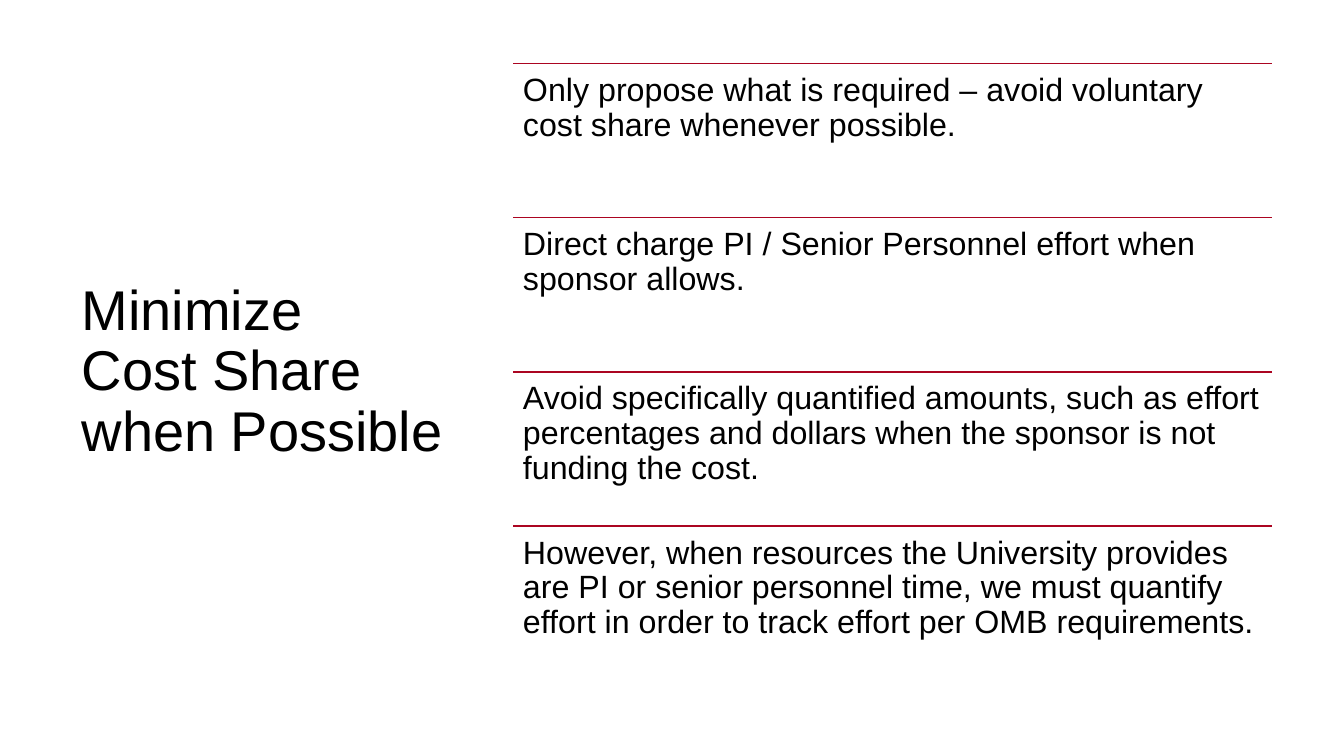
"""Build the slide on minimizing cost share, with four ruled statements."""
from lxml import etree
from pptx import Presentation
from pptx.dml.color import RGBColor
from pptx.enum.shapes import MSO_CONNECTOR
from pptx.enum.text import MSO_ANCHOR, MSO_AUTO_SIZE, PP_ALIGN
from pptx.oxml.ns import qn
from pptx.util import Pt

PX = 9144
BLACK = RGBColor(0x00, 0x00, 0x00)
CRIMSON = RGBColor(0xAB, 0x05, 0x21)
STRAIGHT = MSO_CONNECTOR.STRAIGHT
TOP, MIDDLE = MSO_ANCHOR.TOP, MSO_ANCHOR.MIDDLE
NO_AUTOFIT = MSO_AUTO_SIZE.NONE
LEFT = PP_ALIGN.LEFT

ADVICE = [
    "Only propose what is required – avoid voluntary cost share whenever possible.",
    "Direct charge PI / Senior Personnel effort when sponsor allows.",
    "Avoid specifically quantified amounts, such as effort percentages and dollars "
    "when the sponsor is not funding the cost.",
    "However, when resources the University provides are PI or senior personnel time, "
    "we must quantify effort in order to track effort per OMB requirements.",
]
ADVICE_LEFT, ADVICE_TOP = 509, 63
ADVICE_WIDTH, ADVICE_HEIGHT = 753, 153
INSET = 10


def write(frame, text, size, anchor):
    frame.word_wrap = True
    frame.auto_size = NO_AUTOFIT
    frame.vertical_anchor = anchor
    frame.text = text
    paragraph = frame.paragraphs[0]
    paragraph.alignment = LEFT
    paragraph.line_spacing = 0.9
    for run in paragraph.runs:
        run.font.name = "Arial"
        run.font.size = Pt(size)
        run.font.color.rgb = BLACK


presentation = Presentation()
presentation.slide_width = 12192000
presentation.slide_height = 750 * PX
slide = presentation.slides.add_slide(presentation.slide_layouts[5])

title = slide.shapes.title
title.left, title.top = 71 * PX, 63 * PX
title.width, title.height = 407 * PX, 613 * PX
write(title.text_frame, "Minimize\vCost Share when Possible", 40, MIDDLE)

for row, advice in enumerate(ADVICE):
    left, top = ADVICE_LEFT * PX, (ADVICE_TOP + row * ADVICE_HEIGHT) * PX
    width, height = ADVICE_WIDTH * PX, ADVICE_HEIGHT * PX

    rule = slide.shapes.add_connector(STRAIGHT, left, top, left + width, top)
    rule.line.color.rgb = CRIMSON
    rule.line.width = Pt(1)
    etree.SubElement(rule._element.spPr, qn("a:effectLst"))

    statement = slide.shapes.add_textbox(left, top, width, height).text_frame
    statement.margin_left = statement.margin_right = INSET * PX
    statement.margin_top = statement.margin_bottom = INSET * PX
    write(statement, advice, 23, TOP)

presentation.save("out.pptx")
